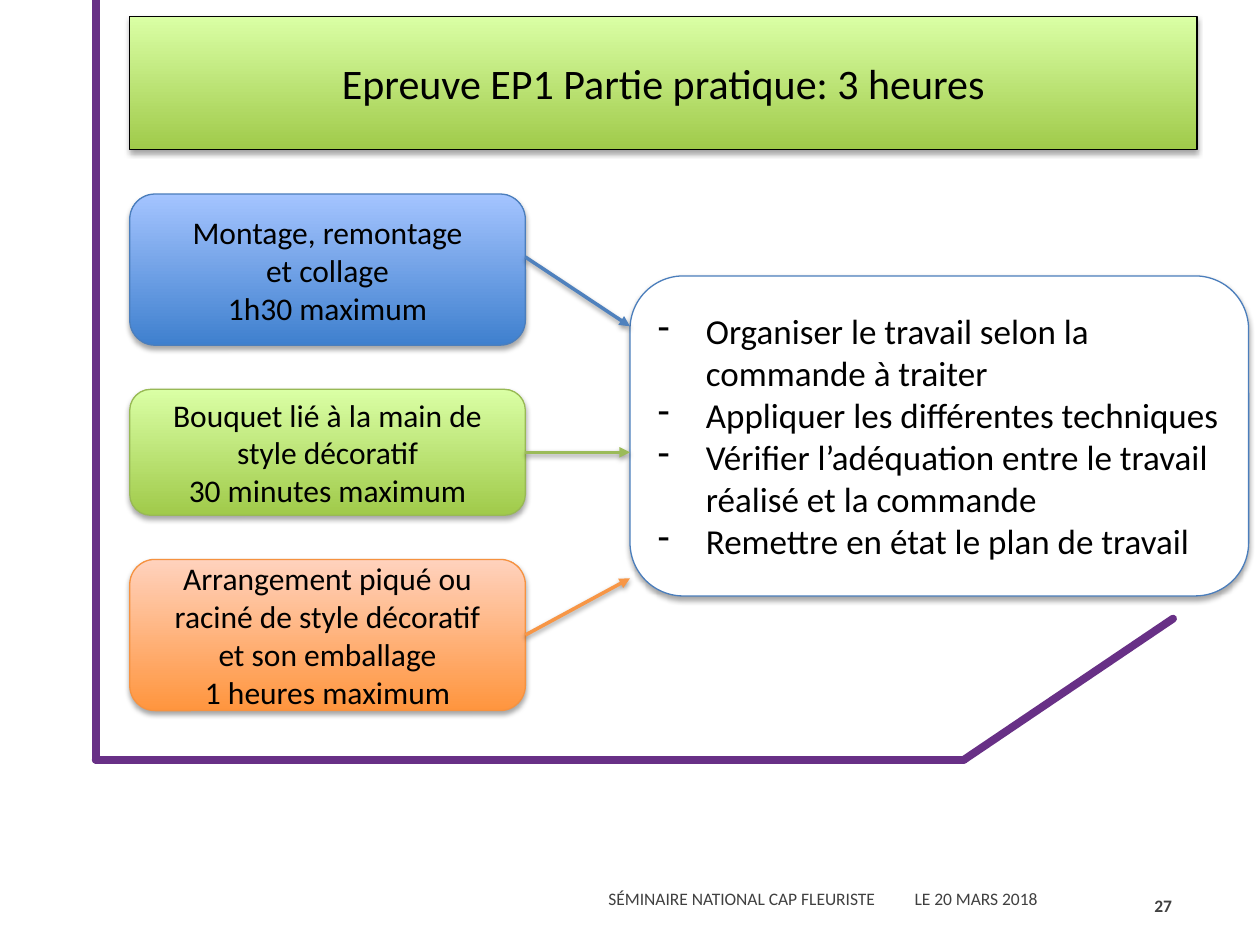
from dataclasses import dataclass

from lxml import etree
from pptx import Presentation
from pptx.dml.color import RGBColor
from pptx.enum.shapes import MSO_CONNECTOR, MSO_SHAPE
from pptx.enum.text import MSO_ANCHOR, PP_ALIGN
from pptx.oxml.ns import qn
from pptx.util import Inches, Pt

RECT, ROUND = MSO_SHAPE.RECTANGLE, MSO_SHAPE.ROUNDED_RECTANGLE
LINE = MSO_CONNECTOR.STRAIGHT
LEFT, CENTER, RIGHT = PP_ALIGN.LEFT, PP_ALIGN.CENTER, PP_ALIGN.RIGHT
MIDDLE = MSO_ANCHOR.MIDDLE

FONT = "Calibri"
BLACK = RGBColor(0x00, 0x00, 0x00)
WHITE = RGBColor(0xFF, 0xFF, 0xFF)
GREY = RGBColor(0x40, 0x40, 0x40)
PURPLE = RGBColor(0x68, 0x30, 0x86)
BLUE_EDGE = RGBColor(0x4B, 0x7E, 0xBC)
GREEN_EDGE = RGBColor(0x98, 0xB9, 0x55)
ORANGE_EDGE = RGBColor(0xF6, 0x92, 0x40)
BLUE_ARROW = RGBColor(0x4F, 0x81, 0xBD)
GREEN_ARROW = RGBColor(0x9B, 0xBB, 0x59)
ORANGE_ARROW = RGBColor(0xF7, 0x96, 0x46)
BLUE = (RGBColor(0x3F, 0x80, 0xCE), RGBColor(0xA4, 0xC4, 0xFF))
GREEN = (RGBColor(0xA0, 0xCA, 0x4A), RGBColor(0xDA, 0xFF, 0xA5))
ORANGE = (RGBColor(0xFF, 0x95, 0x3E), RGBColor(0xFF, 0xD2, 0xBD))

STEP_X, STEP_W = 1.03, 3.14
STEP_END = STEP_X + STEP_W
PANEL_X = 5


@dataclass
class Box:
    x: float
    y: float
    w: float
    h: float
    lines: list[str]
    size: int
    fill: tuple[RGBColor, ...]
    edge: RGBColor
    kind: int = ROUND
    dashes: bool = False


@dataclass
class Step:
    box: Box
    start: float
    end: float
    color: RGBColor


def step(y: float, h: float, lines: list[str], fill: tuple[RGBColor, ...],
         edge: RGBColor, start: float, end: float, color: RGBColor) -> Step:
    box = Box(STEP_X, y, STEP_W, h, lines, 18, fill, edge)
    return Step(box, start, end, color)


TITLE = Box(1.03, 0.13, 8.47, 1.06, ["Epreuve EP1 Partie pratique: 3 heures"],
            24, GREEN, BLACK, RECT)
PANEL = Box(PANEL_X, 2.19, 4.91, 2.54, [
    "Organiser le travail selon la commande à traiter",
    "Appliquer les différentes techniques",
    "Vérifier l’adéquation entre le travail réalisé et la commande",
    "Remettre en état le plan de travail",
], 20, (WHITE,), BLUE_EDGE, dashes=True)
STEPS = [
    step(1.54, 1.2, ["Montage, remontage", "et collage", "1h30 maximum"],
         BLUE, BLUE_EDGE, 2.04, 2.59, BLUE_ARROW),
    step(3.09, 1, ["Bouquet lié à la main de style décoratif",
                   "30 minutes maximum"],
         GREEN, GREEN_EDGE, 3.59, 3.59, GREEN_ARROW),
    step(4.44, 1.2, ["Arrangement piqué ou raciné de style décoratif",
                     "et son emballage", "1 heures maximum"],
         ORANGE, ORANGE_EDGE, 5.04, 4.59, ORANGE_ARROW),
]
FRAME = [(0.76, 0), (0.76, 6.03), (7.65, 6.03), (9.31, 4.91)]


def add_shadow(item, alpha: int, dist: float) -> None:
    """Add a soft shadow that falls straight down."""
    props = item._element.spPr
    effects = props.find(qn("a:effectLst"))
    if effects is None:
        effects = etree.SubElement(props, qn("a:effectLst"))
    outer = etree.SubElement(
        effects, qn("a:outerShdw"), blurRad=str(Pt(3.1)), dist=str(Pt(dist)),
        dir="5400000", rotWithShape="0")
    tint = etree.SubElement(outer, qn("a:srgbClr"), val=str(BLACK))
    etree.SubElement(tint, qn("a:alpha"), val=str(alpha * 1000))


def add_dash(para) -> None:
    props = para._p.get_or_add_pPr()
    props.set("marL", str(Inches(0.38)))
    props.set("indent", str(Inches(-0.38)))
    etree.SubElement(props, qn("a:buChar"), char="-")


def style(para, size: int, color: RGBColor, align: int,
          bold: bool = False) -> None:
    para.alignment = align
    font = para.font
    font.name, font.size, font.bold = FONT, Pt(size), bold
    font.color.rgb = color


def add_box(slide, box: Box):
    shape = slide.shapes.add_shape(
        box.kind, Inches(box.x), Inches(box.y), Inches(box.w), Inches(box.h))
    shape.shadow.inherit = False
    if len(box.fill) > 1:
        shape.fill.gradient()
        shape.fill.gradient_angle = 90
        for i, stop in enumerate(shape.fill.gradient_stops):
            stop.position, stop.color.rgb = i, box.fill[i]
    else:
        shape.fill.solid()
        shape.fill.fore_color.rgb = box.fill[0]
    shape.line.color.rgb = box.edge
    shape.line.width = Pt(0.75)
    add_shadow(shape, 35, 1.8)
    frame = shape.text_frame
    frame.word_wrap = True
    frame.vertical_anchor = MIDDLE
    frame.text = "\n".join(box.lines)
    for para in frame.paragraphs:
        if box.dashes:
            add_dash(para)
        style(para, box.size, BLACK, LEFT if box.dashes else CENTER)
    return shape


def add_line(slide, start: tuple[float, float], end: tuple[float, float],
             color: RGBColor, width: float):
    line = slide.shapes.add_connector(
        LINE, *(Inches(v) for v in (*start, *end)))
    line.line.color.rgb = color
    line.line.width = Pt(width)
    etree.SubElement(line._element.spPr, qn("a:effectLst"))
    return line


def add_arrow(slide, item: Step, shape) -> None:
    arrow = add_line(slide, (STEP_END, item.start), (PANEL_X, item.end),
                     item.color, 2)
    etree.SubElement(arrow.line._get_or_add_ln(), qn("a:tailEnd"),
                     type="triangle")
    add_shadow(arrow, 38, 1.6)
    if abs(item.start - item.box.y - item.box.h / 2) < 0.01:
        arrow.begin_connect(shape, 3)


def add_note(slide, x: float, y: float, w: float, text: str, align: int,
             bold: bool = False, tab: float = 0) -> None:
    """Add a line of footer text, with a tab stop if one is given."""
    area = slide.shapes.add_textbox(
        Inches(x), Inches(y), Inches(w), Inches(0.4))
    frame = area.text_frame
    frame.word_wrap = True
    frame.vertical_anchor = MIDDLE
    frame.text = text
    para = frame.paragraphs[0]
    if tab:
        tabs = etree.SubElement(para._p.get_or_add_pPr(), qn("a:tabLst"))
        etree.SubElement(tabs, qn("a:tab"), pos=str(Inches(tab)), algn="l")
    style(para, 10, GREY, align, bold)


def main() -> None:
    deck = Presentation()
    deck.slide_width, deck.slide_height = Inches(10), Inches(7.5)
    slide = deck.slides.add_slide(deck.slide_layouts[6])
    for start, end in zip(FRAME, FRAME[1:]):
        edge = add_line(slide, start, end, PURPLE, 4.5)
        edge.line._get_or_add_ln().set("cap", "rnd")
    add_note(slide, 4.73, 6.93, 3.75,
             "SÉMINAIRE NATIONAL CAP FLEURISTE\tLE 20 MARS 2018", LEFT,
             tab=2.43)
    add_note(slide, 8.96, 6.99, 0.44, "27", RIGHT, bold=True)
    add_box(slide, TITLE)
    shapes = [add_box(slide, item.box) for item in STEPS]
    add_box(slide, PANEL)
    for item, shape in zip(STEPS, shapes):
        add_arrow(slide, item, shape)
    deck.save("out.pptx")


if __name__ == "__main__":
    main()
